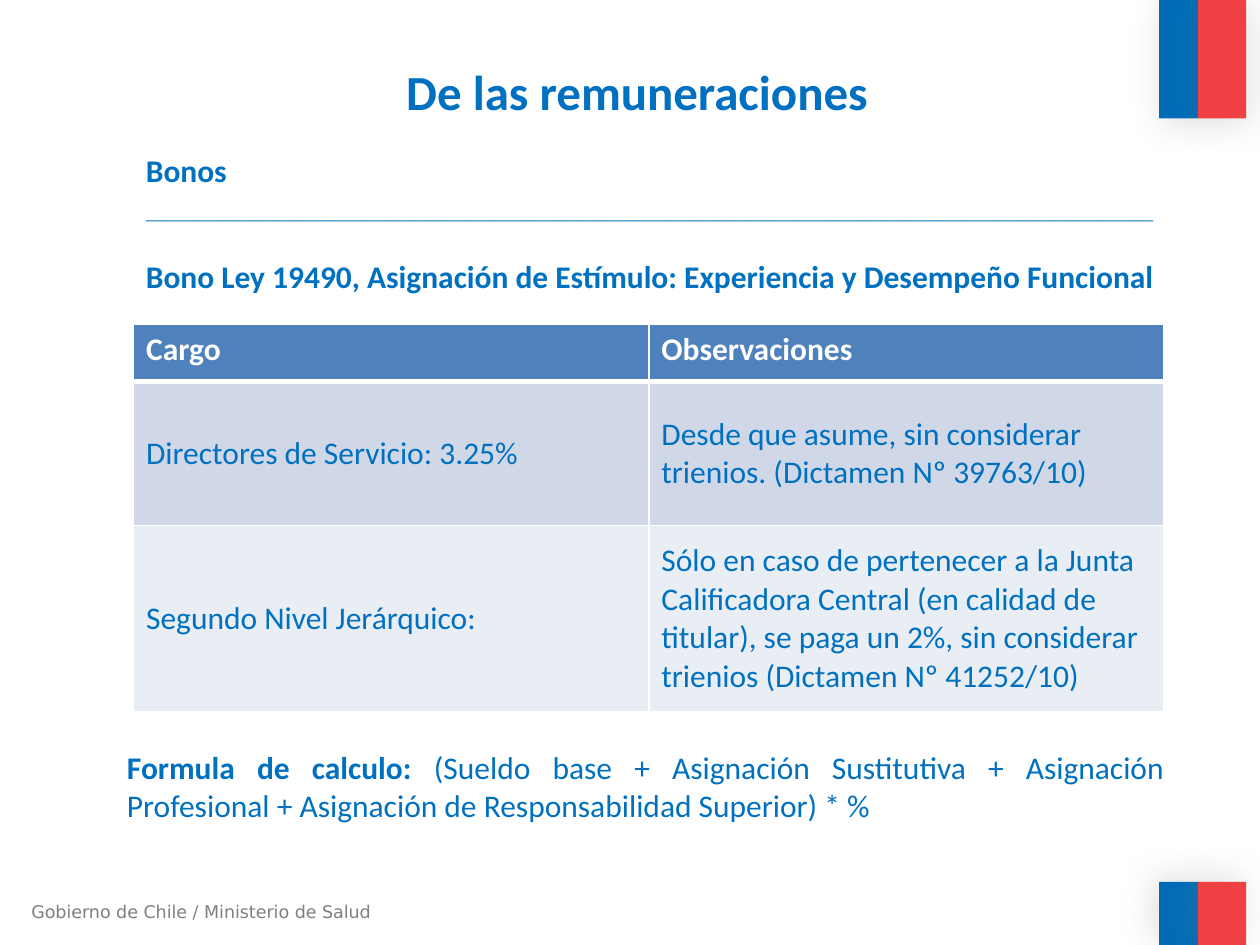
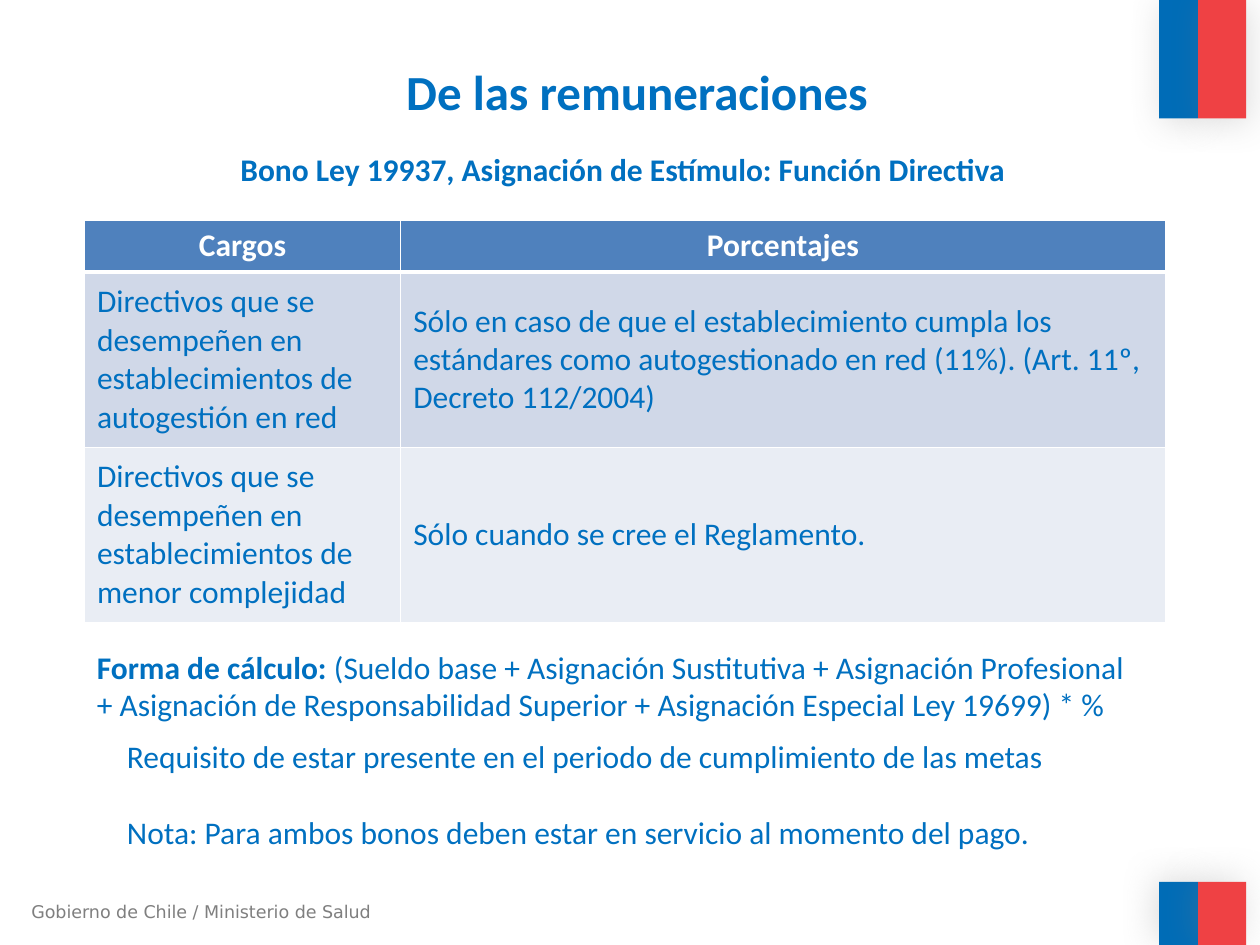
from lxml import etree
from pptx import Presentation
from pptx.dml.color import RGBColor
from pptx.enum.shapes import MSO_SHAPE
from pptx.enum.text import MSO_ANCHOR, PP_ALIGN
from pptx.oxml.ns import qn
from pptx.util import Inches, Pt

RECT = MSO_SHAPE.RECTANGLE
MIDDLE, TOP = MSO_ANCHOR.MIDDLE, MSO_ANCHOR.TOP
LEFT, CENTER, JUSTIFY = PP_ALIGN.LEFT, PP_ALIGN.CENTER, PP_ALIGN.JUSTIFY

HEX = {"flag_blue": "006CB7", "flag_red": "EF4144", "shadow": "808080",
       "text": "0070C0", "footer": "7F7F7F", "white": "FFFFFF",
       "header": "4F81BD", "band_dark": "D0D8E8", "band_light": "E9EDF4"}
RGB = {name: RGBColor.from_string(value) for name, value in HEX.items()}

prs = Presentation()
prs.slide_width, prs.slide_height = Inches(10), Inches(7.5)
COL = prs.slide_width / 100
ROW = prs.slide_height / 75


def grid(left, top, width, height):
    return int(left * COL), int(top * ROW), int(width * COL), int(height * ROW)


def write(tf, paragraphs, align=LEFT, color="text", font="Calibri"):
    tf.word_wrap = True
    for i, (parts, size, before) in enumerate(paragraphs):
        p = tf.paragraphs[0] if i == 0 else tf.add_paragraph()
        p.alignment = align
        if before:
            p.space_before = Pt(before)
        for text, bold in parts:
            r = p.add_run()
            r.text = text
            r.font.name, r.font.size, r.font.bold = font, Pt(size), bold
            r.font.color.rgb = RGB[color]


FLAG = [(92, 3.1, "flag_blue"), (95.1, 3.8, "flag_red")]
FLAG_ROWS = [(0, 9.4, 45), (70, 5, 215)]

SLIDES = [
    {
        "table": (10.6, 25.7, [40.9, 40.9], [4.6, 11.4, 14.8]),
        "header_align": LEFT,
        "cells": [
            ["Cargo", "Observaciones"],
            ["Directores de Servicio: 3.25%",
             "Desde que asume, sin considerar trienios. (Dictamen Nº 39763/10)"],
            ["Segundo Nivel Jerárquico:",
             "Sólo en caso de pertenecer a la Junta Calificadora Central (en calidad "
             "de titular), se paga un 2%, sin considerar trienios (Dictamen Nº 41252/10)"],
        ],
        "texts": [
            ((10.6, 11.5, 82.7, 12.5), JUSTIFY, [
                ([("Bonos", True)], 18, 0),
                ([("_" * 116, False)], 10, 7.6),
                ([("Bono Ley 19490, Asignación de Estímulo: Experiencia y "
                   "Desempeño Funcional", True)], 18, 19.2)]),
            ((9.1, 58.9, 84.3, 10.1), JUSTIFY, [
                ([("Formula de calculo: ", True),
                  ("(Sueldo base + Asignación Sustitutiva + Asignación Profesional + "
                   "Asignación de Responsabilidad Superior) * %", False)], 18, 0)]),
        ],
    },
    {
        "table": (6.7, 17.5, [25.1, 60.7], [4.1, 13.9, 13.9]),
        "header_align": CENTER,
        "cells": [
            ["Cargos", "Porcentajes"],
            ["Directivos que se desempeñen en establecimientos de autogestión en red",
             "Sólo en caso de que el establecimiento cumpla los estándares como "
             "autogestionado en red (11%). (Art. 11º, Decreto 112/2004)"],
            ["Directivos que se desempeñen en establecimientos de menor complejidad",
             "Sólo cuando se cree el Reglamento."],
        ],
        "texts": [
            ((10.3, 11.4, 78.3, 4), CENTER, [
                ([("Bono Ley 19937, Asignación de Estímulo: Función Directiva", True)],
                 18, 0)]),
            ((6.7, 50.9, 85, 7.1), LEFT, [
                ([("Forma de cálculo: ", True),
                  ("(Sueldo base + Asignación Sustitutiva + Asignación Profesional + "
                   "Asignación de Responsabilidad Superior + Asignación Especial "
                   "Ley 19699) * %", False)], 18, 0)]),
            ((9.1, 58, 85, 10.1), LEFT, [
                ([("Requisito de estar presente en el periodo de cumplimiento "
                   "de las metas", False)], 18, 0),
                ([("Nota: Para ambos bonos deben estar en servicio al momento "
                   "del pago.", False)], 18, 22)]),
        ],
    },
]

for content in SLIDES:
    s = prs.slides.add_slide(prs.slide_layouts[6])

    for top, height, angle in FLAG_ROWS:
        for left, width, color in FLAG:
            sp = s.shapes.add_shape(RECT, *grid(left, top, width, height))
            sp.fill.solid()
            sp.fill.fore_color.rgb = RGB[color]
            sp.line.fill.background()
            sp.shadow.inherit = False
            effects = sp._element.spPr.find(qn("a:effectLst"))
            shadow = etree.SubElement(effects, qn("a:outerShdw"), blurRad=str(Pt(20)),
                                      dist=str(Pt(3)), dir=str(angle * 60000),
                                      rotWithShape="0")
            tint = etree.SubElement(shadow, qn("a:srgbClr"), val=HEX["shadow"])
            etree.SubElement(tint, qn("a:alpha"), val="25000")

    footer = s.shapes.add_textbox(*grid(1.5, 71, 30.2, 2.7))
    write(footer.text_frame, [([("Gobierno de Chile / Ministerio de Salud", False)], 10, 0)],
          color="footer", font="DejaVu Sans")

    title = s.shapes.add_textbox(*grid(12.2, 2.9, 76.7, 13.4))
    title.text_frame.margin_top = int(2 * ROW)
    write(title.text_frame, [([("De las remuneraciones", True)], 28, 0)], CENTER)

    left, top, widths, heights = content["table"]
    tbl = s.shapes.add_table(len(heights), len(widths),
                             *grid(left, top, sum(widths), sum(heights))).table
    tbl.horz_banding = False
    for column, width in zip(tbl.columns, widths):
        column.width = int(width * COL)
    for i, height in enumerate(heights):
        tbl.rows[i].height = int(height * ROW)
        is_header = i == 0
        for j, text in enumerate(content["cells"][i]):
            cell = tbl.cell(i, j)
            cell.vertical_anchor = TOP if is_header else MIDDLE
            edges = {"lnL": 1, "lnR": 1, "lnT": 3 if i == 1 else 1,
                     "lnB": 3 if is_header else 1}
            for edge, weight in edges.items():
                ln = etree.SubElement(cell._tc.get_or_add_tcPr(), qn("a:" + edge),
                                      w=str(Pt(weight)))
                fill = etree.SubElement(ln, qn("a:solidFill"))
                etree.SubElement(fill, qn("a:srgbClr"), val=HEX["white"])
            cell.fill.solid()
            cell.fill.fore_color.rgb = RGB[["header", "band_dark", "band_light"][i]]
            write(cell.text_frame, [([(text, is_header)], 18, 0)],
                  content["header_align"] if is_header else LEFT,
                  "white" if is_header else "text")

    for box, align, paragraphs in content["texts"]:
        tb = s.shapes.add_textbox(*grid(*box))
        write(tb.text_frame, paragraphs, align)

prs.save("out.pptx")
